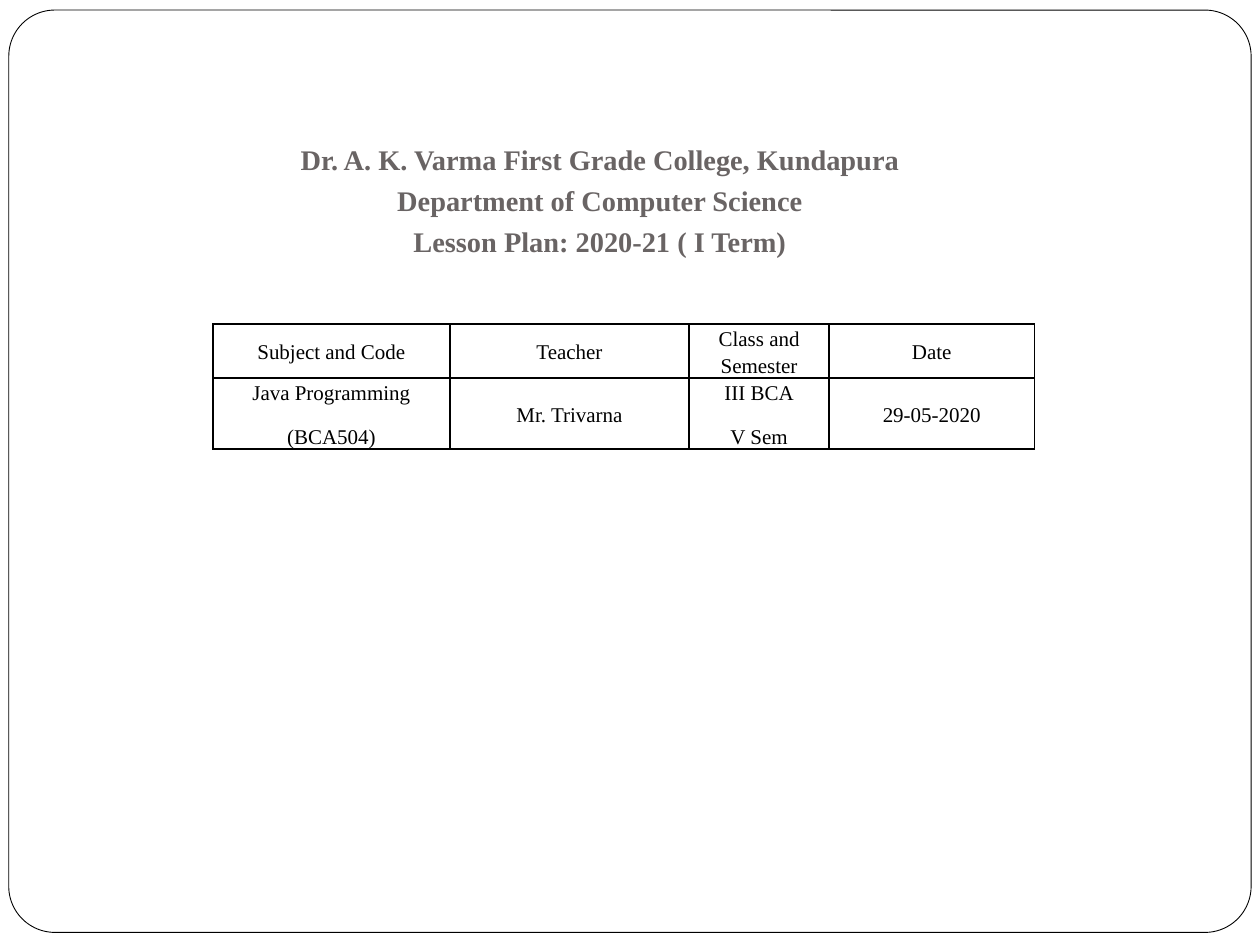
from copy import deepcopy

from lxml.etree import SubElement
from pptx import Presentation
from pptx.dml.color import RGBColor
from pptx.enum.shapes import MSO_SHAPE
from pptx.enum.text import MSO_ANCHOR, MSO_AUTO_SIZE, PP_ALIGN
from pptx.oxml.ns import qn
from pptx.util import Inches, Pt

COLORS = {"paper": "FFFFFF", "ink": "000000", "title": "696464"}
FONT = "Times New Roman"

HEADING = "\v".join([
    "Dr. A. K. Varma First Grade College, Kundapura",
    "Department of Computer Science",
    "Lesson Plan: 2020-21 ( I Term)",
])
ROWS = [
    ["Subject and Code", "Teacher", "Class and Semester", "Date"],
    ["Java Programming\n(BCA504)", "Mr. Trivarna", "III BCA\nV Sem", "29-05-2020"],
]
COL_WIDTHS = [1.88, 1.9, 1.11, 1.63]
ROW_HEIGHTS = [0.43, 0.56]


def rgb(name):
    return RGBColor.from_string(COLORS[name])


def write(tf, text, size=12, color="ink", bold=False, spacing=1.15, after=10):
    """Fill a text frame; a newline starts a paragraph, a vertical tab a line."""
    tf.word_wrap = True
    tf.text = text
    for p in tf.paragraphs:
        p.alignment = PP_ALIGN.CENTER
        p.line_spacing = spacing
        p.space_before = Pt(0)
        p.space_after = Pt(after)
        for r in p.runs:
            r.font.name = FONT
            r.font.size = Pt(size)
            r.font.bold = bold
            r.font.color.rgb = rgb(color)
        # Line breaks take the run format so that they keep the line height
        for br in p._p.findall(qn("a:br")):
            br.append(deepcopy(p.runs[0]._r.rPr))


def add_frame(s, left, top, width, height):
    sp = s.shapes.add_shape(MSO_SHAPE.ROUNDED_RECTANGLE, Inches(left), Inches(top),
                            Inches(width), Inches(height))
    sp.adjustments[0] = 0.05
    sp.shadow.inherit = False
    sp.fill.solid()
    sp.fill.fore_color.rgb = rgb("paper")
    sp.line.color.rgb = rgb("ink")
    sp.line.width = Pt(0.5)
    s.shapes._spTree.insert(2, sp._element)  # behind the title


def place_title(s, left, top, width, height):
    sp = s.shapes.title
    sp.left, sp.top, sp.width, sp.height = map(Inches, (left, top, width, height))
    tf = sp.text_frame
    tf.auto_size = MSO_AUTO_SIZE.NONE
    tf.vertical_anchor = MSO_ANCHOR.BOTTOM
    tf.margin_left = tf.margin_right = Inches(0.1)
    tf.margin_top, tf.margin_bottom = Inches(0.05), Inches(0.4)
    write(tf, HEADING, size=16.2, color="title", bold=True, spacing=1.2, after=0)


def add_borders(cell, width=1):
    tcPr = cell._tc.get_or_add_tcPr()
    for i, side in enumerate(("a:lnL", "a:lnR", "a:lnT", "a:lnB")):
        ln = SubElement(tcPr, qn(side), w=str(Pt(width)))
        fill = SubElement(ln, qn("a:solidFill"))
        SubElement(fill, qn("a:srgbClr"), val=COLORS["ink"])
        tcPr.insert(i, ln)


def add_plan_table(s, left, top):
    table = s.shapes.add_table(len(ROWS), len(COL_WIDTHS), Inches(left), Inches(top),
                               Inches(sum(COL_WIDTHS)), Inches(sum(ROW_HEIGHTS))).table
    table.first_row = table.horz_banding = False
    for col, width in zip(table.columns, COL_WIDTHS):
        col.width = Inches(width)
    for row, height, texts in zip(table.rows, ROW_HEIGHTS, ROWS):
        row.height = Inches(height)
        for cell, text in zip(row.cells, texts):
            cell.fill.background()
            cell.vertical_anchor = MSO_ANCHOR.MIDDLE
            cell.margin_left = cell.margin_right = Inches(0.07)
            cell.margin_top = cell.margin_bottom = 0
            write(cell.text_frame, text)
            add_borders(cell)


def main():
    prs = Presentation()
    prs.slide_width, prs.slide_height = Inches(10), Inches(7.5)
    s = prs.slides.add_slide(prs.slide_layouts[5])
    add_frame(s, 0.07, 0.08, 9.86, 7.32)
    place_title(s, 0.51, 1.31, 8.5, 1.14)
    add_plan_table(s, 1.69, 2.57)
    prs.save("out.pptx")


if __name__ == "__main__":
    main()
